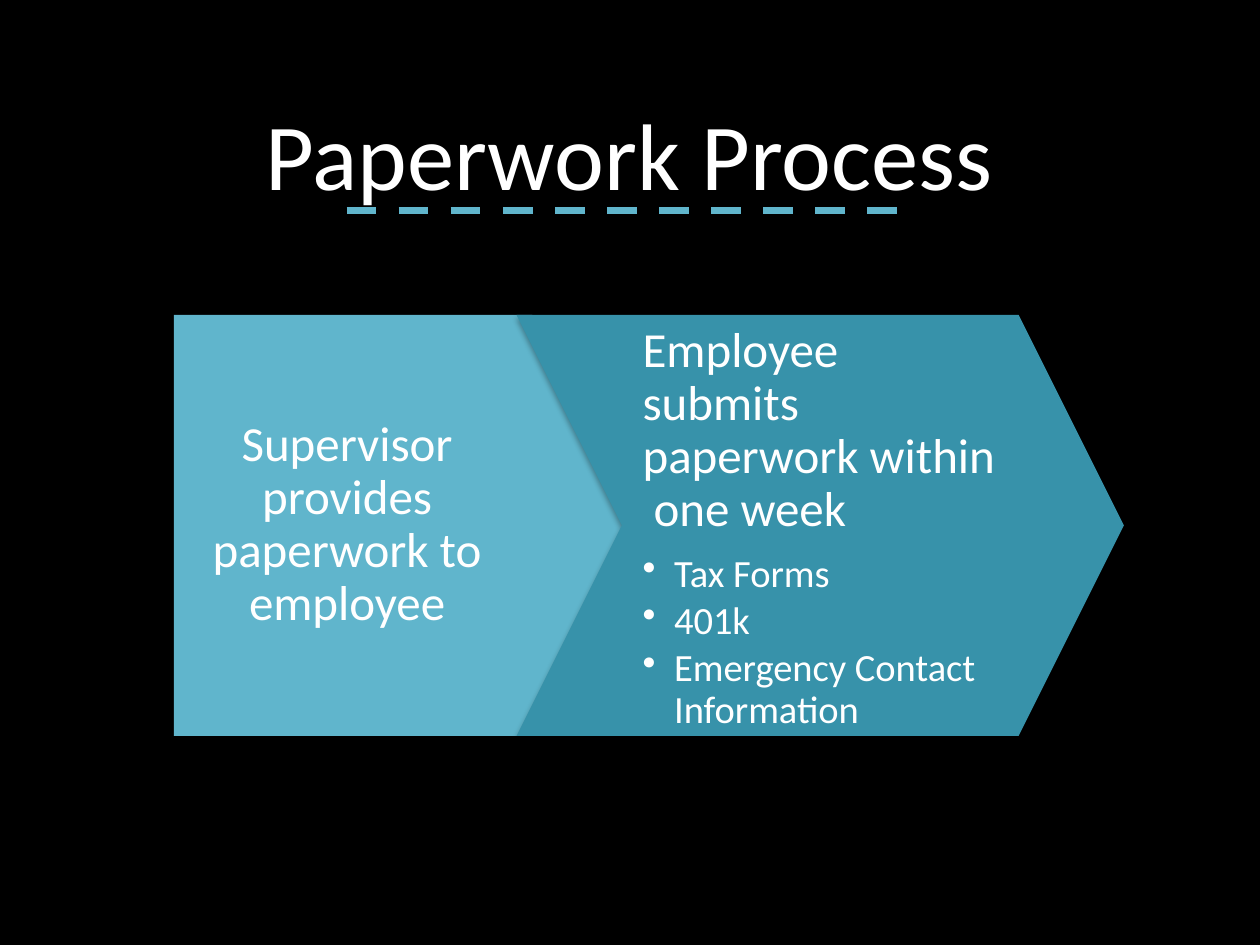
from lxml import etree
from pptx import Presentation
from pptx.dml.color import RGBColor
from pptx.enum.dml import MSO_LINE
from pptx.enum.shapes import MSO_CONNECTOR, MSO_SHAPE
from pptx.enum.text import MSO_ANCHOR, PP_ALIGN
from pptx.oxml.ns import qn
from pptx.util import Inches, Pt

LEFT, CENTER = PP_ALIGN.LEFT, PP_ALIGN.CENTER
TOP, MIDDLE = MSO_ANCHOR.TOP, MSO_ANCHOR.MIDDLE
PENTAGON, CHEVRON = MSO_SHAPE.PENTAGON, MSO_SHAPE.CHEVRON
FONT = "Calibri"
COLORS = {"back": "000000", "text": "FFFFFF", "light": "60B5CC", "dark": "3792AA"}
STEP_TOP, STEP_HIGH = 2.5, 3.34


def color(name):
    return RGBColor.from_string(COLORS[name])


def add_shadow(shape, alpha, blur, dist):
    """Cast a soft black shadow straight down; sizes in points."""
    effects = etree.SubElement(shape._element.spPr, qn("a:effectLst"))
    outer = etree.SubElement(
        effects, qn("a:outerShdw"), blurRad=str(Pt(blur)), dist=str(Pt(dist)),
        dir="5400000", rotWithShape="0")
    black = etree.SubElement(outer, qn("a:srgbClr"), val=COLORS["back"])
    etree.SubElement(black, qn("a:alpha"), val=str(alpha * 1000))


def add_rule(slide, left, right, top):
    rule = slide.shapes.add_connector(
        MSO_CONNECTOR.STRAIGHT, Inches(left), Inches(top), Inches(right), Inches(top))
    rule.line.color.rgb = color("light")
    rule.line.width = Pt(4.25)
    rule.line.dash_style = MSO_LINE.DASH
    add_shadow(rule, 40, 4, 3.3)


def add_step(slide, kind, left, width, fill):
    step = slide.shapes.add_shape(
        kind, Inches(left), Inches(STEP_TOP), Inches(width), Inches(STEP_HIGH))
    step.adjustments[0] = 0.25
    step.fill.solid()
    step.fill.fore_color.rgb = color(fill)
    step.line.fill.background()
    add_shadow(step, 32, 3.5, 2.2)


def add_box(slide, left, top, width, height, pads=(0.1, 0.05, 0.1, 0.05), anchor=MIDDLE):
    box = slide.shapes.add_textbox(
        Inches(left), Inches(top), Inches(width), Inches(height))
    frame = box.text_frame
    frame.word_wrap = True
    frame.vertical_anchor = anchor
    (frame.margin_left, frame.margin_top,
     frame.margin_right, frame.margin_bottom) = map(Inches, pads)
    return frame


def write(frame, text, size=28, align=LEFT, after=0, spacing=1.0, bullet=False):
    """Write one paragraph, starting with the empty first one."""
    para = frame.paragraphs[0]
    if para.runs:
        para = frame.add_paragraph()
    if bullet:
        props = para._p.get_or_add_pPr()
        props.set("marL", str(Inches(0.25)))
        props.set("indent", str(Inches(-0.25)))
        etree.SubElement(props, qn("a:buChar"), char="•")
    para.alignment = align
    para.line_spacing = spacing
    para.space_after = Pt(after)
    run = para.add_run()
    run.text = text
    run.font.name = FONT
    run.font.size = Pt(size)
    run.font.color.rgb = color("text")


def main():
    deck = Presentation()
    deck.slide_width, deck.slide_height = Inches(10), Inches(7.5)
    slide = deck.slides.add_slide(deck.slide_layouts[6])
    slide.background.fill.solid()
    slide.background.fill.fore_color.rgb = color("back")

    # Title over its dashed rule
    add_rule(slide, 2.75, 7.25, 1.67)
    title = add_box(slide, 0.6, 0.42, 8.79, 1.58)
    write(title, "Paperwork Process", size=54, align=CENTER)

    # First step
    add_step(slide, PENTAGON, 1.38, 3.68, "light")
    first = add_box(slide, 1.38, STEP_TOP, 3.26, STEP_HIGH, (0.17, 0.08, 0.68, 0.08))
    write(first, "Supervisor provides paperwork to employee",
          align=CENTER, after=9.8, spacing=0.9)

    # Second step with its list of forms
    add_step(slide, CHEVRON, 4.1, 4.82, "dark")
    second = add_box(slide, 4.93, STEP_TOP, 3.15, STEP_HIGH,
                     (0.17, 0.08, 0.17, 0.08), TOP)
    write(second, "Employee submits paperwork within  one week", after=9.8, spacing=0.9)
    for form in ("Tax Forms", "401k", "Emergency Contact Information"):
        write(second, form, size=22, after=3.3, spacing=0.9, bullet=True)

    deck.save("out.pptx")


if __name__ == "__main__":
    main()
